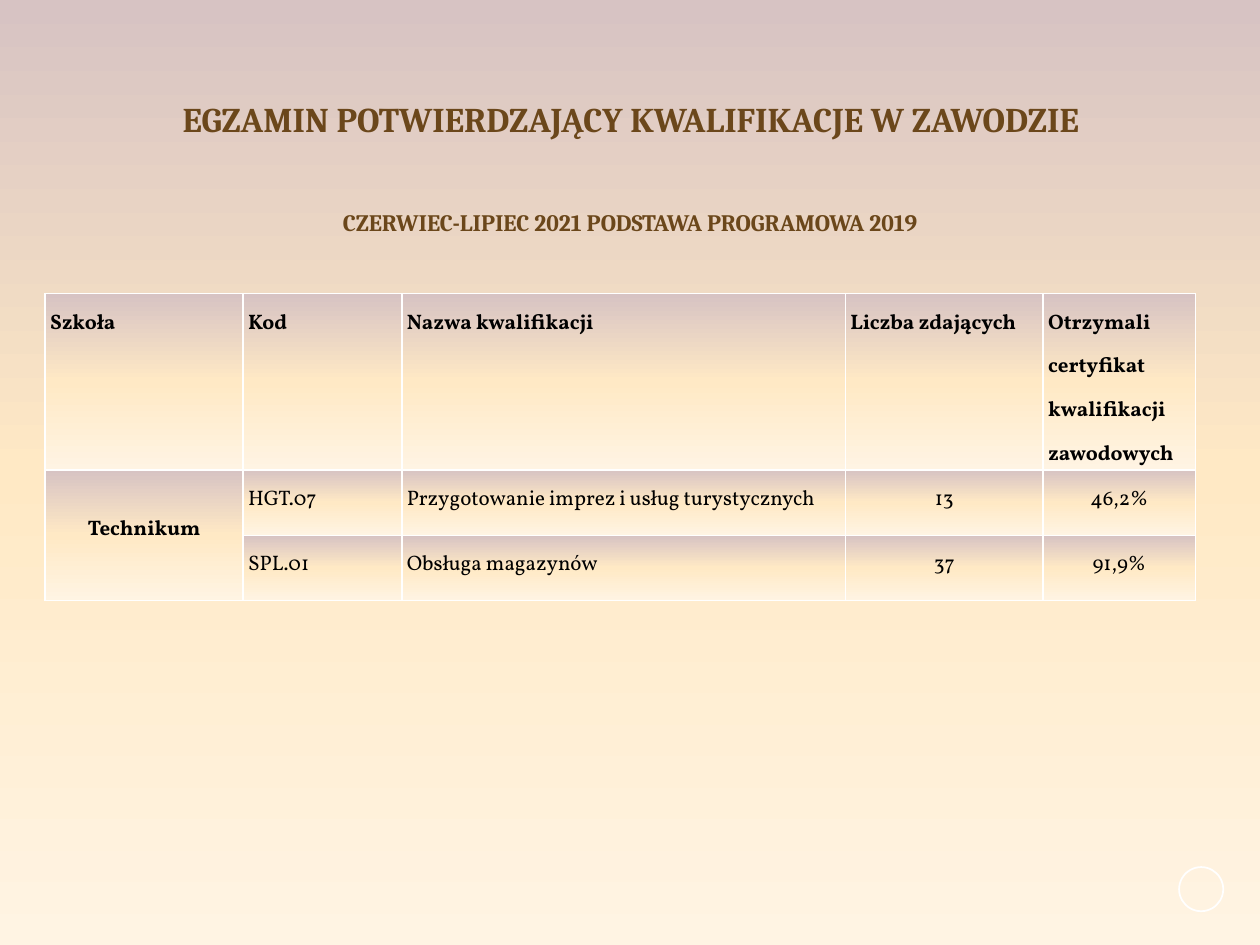
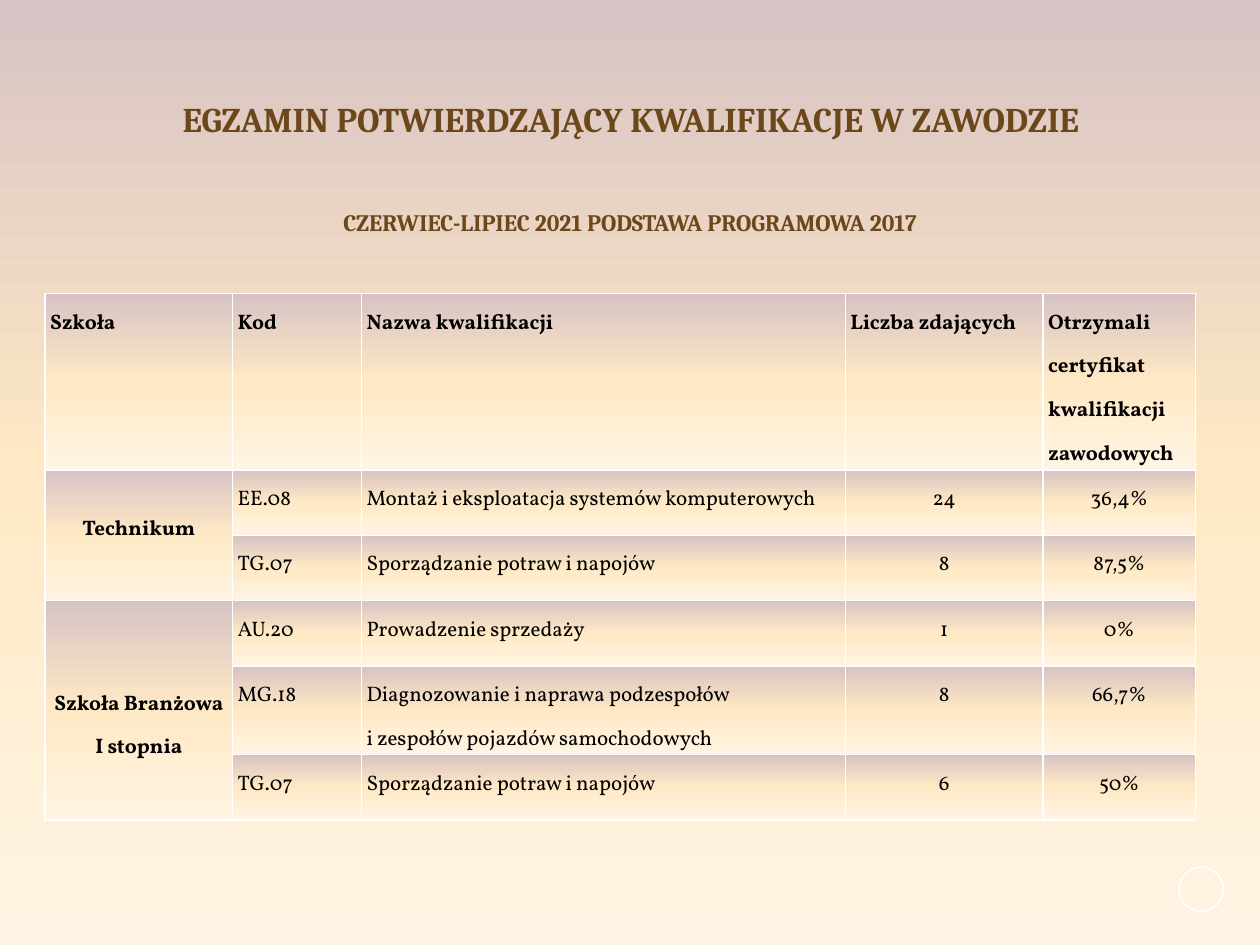
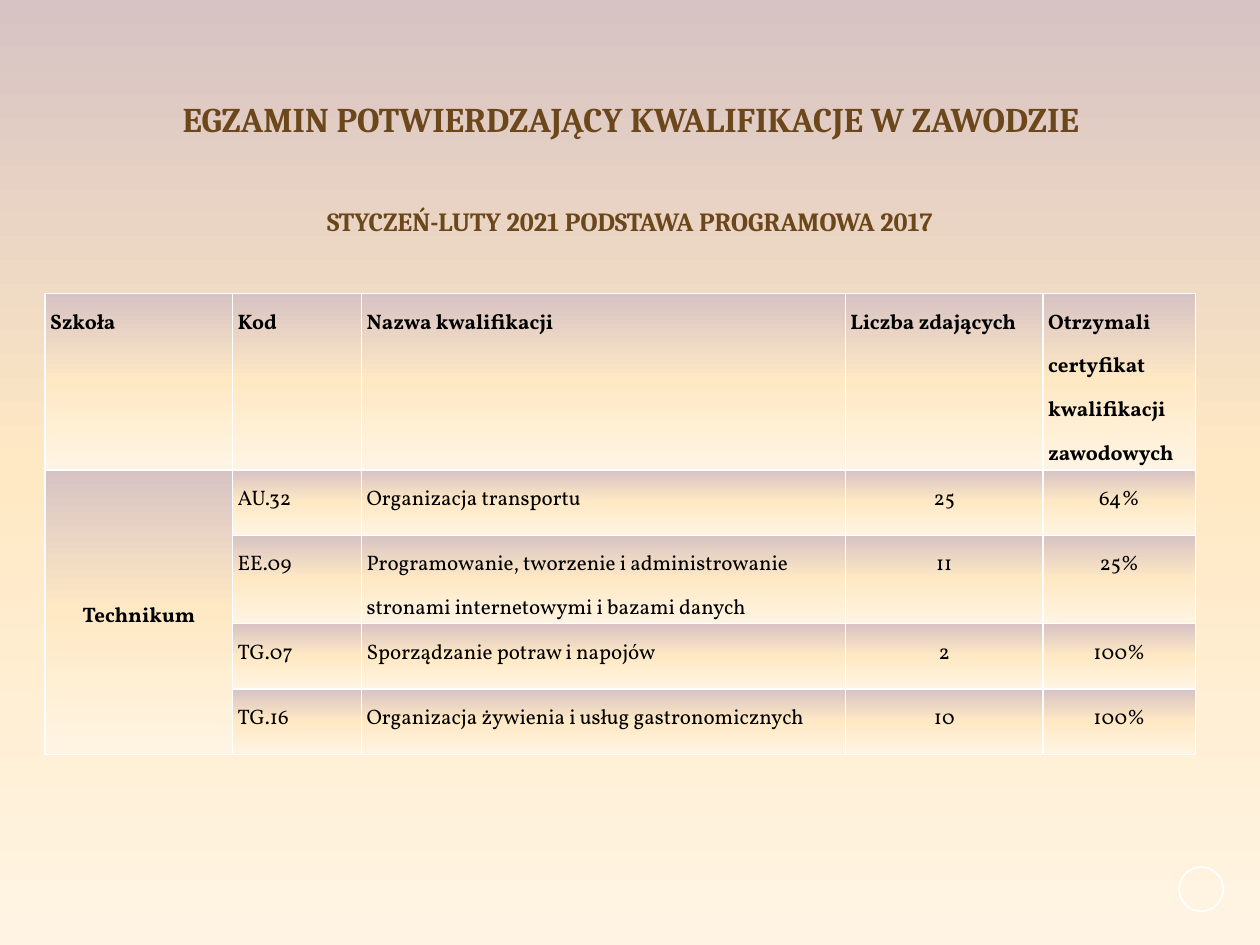
from copy import deepcopy
from dataclasses import dataclass
from typing import Any

from lxml import etree
from pptx import Presentation, util as u
from pptx.dml import color, fill as fills
from pptx.enum import shapes, text
from pptx.oxml import ns


@dataclass(frozen=True)
class Theme:
    brown: str = "6B471B"
    black: str = "000000"
    white: str = "FFFFFF"
    gradient: tuple = ((0, "D7C3C3"), (0.5, "FFE9C5"), (1, "FFF4E3"))
    heading_font: str = "Cambria"
    table_font: str = "Vollkorn"
    title_size: float = 19.8
    subtitle_size: float = 13.5
    large_subtitle_size: float = 15
    table_size: float = 12
    rule_width: float = 1


@dataclass(frozen=True)
class Heading:
    left: float
    top: float
    width: float
    height: float
    line_spacing: float
    bottom_inset: float


# Shared layout, in centimetres
TITLE = Heading(0.91, 2.13, 23.6, 1.4, 0.9, 0.91)
SUBTITLE = Heading(6.1, 4.11, 13.21, 1.4, 0.7, 0.67)
TABLE_LEFT, TABLE_TOP = 0.91, 5.92
HEADER_HEIGHT, ROW_HEIGHT, TALL_ROW_HEIGHT = 3.55, 1.32, 1.78
CELL_SIDE, CELL_TOP = 0.1, 0.02
FIRST_LINE, NEXT_LINE = 0.61, 0.88
CELL_LINE_SPACING = 1.5
WIDE_CODES = (3.99, 3.2, 8.94, 3.99, 3.07)
WIDE_NAMES = (3.78, 2.6, 9.75, 3.99, 3.07)


@dataclass(frozen=True)
class Qualification:
    code: str
    name: str
    candidates: str
    certified: str
    height: float = ROW_HEIGHT


@dataclass(frozen=True)
class School:
    name: str
    lines_above: int
    qualifications: tuple[Qualification, ...]


@dataclass(frozen=True)
class ExamSession:
    subtitle: str
    subtitle_size: float
    columns: tuple[float, ...]
    schools: tuple[School, ...]


THEME = Theme()
CENTER, LEFT = text.PP_ALIGN.CENTER, text.PP_ALIGN.LEFT

# Content
TITLE_TEXT = "EGZAMIN POTWIERDZAJĄCY KWALIFIKACJE W ZAWODZIE"
HEADERS = ("Szkoła", "Kod", "Nazwa kwalifikacji", "Liczba zdających",
           "Otrzymali certyfikat kwalifikacji zawodowych")
COOKING = "Sporządzanie potraw i napojów"
SESSIONS = (
    ExamSession("CZERWIEC-LIPIEC 2021 PODSTAWA PROGRAMOWA 2019",
                THEME.subtitle_size, WIDE_CODES, (
        School("Technikum", 1, (
            Qualification("HGT.07", "Przygotowanie imprez i usług turystycznych",
                          "13", "46,2%"),
            Qualification("SPL.01", "Obsługa magazynów", "37", "91,9%"),
        )),
    )),
    ExamSession("CZERWIEC-LIPIEC 2021 PODSTAWA PROGRAMOWA 2017",
                THEME.subtitle_size, WIDE_NAMES, (
        School("Technikum", 1, (
            Qualification("EE.08", "Montaż i eksploatacja systemów komputerowych",
                          "24", "36,4%"),
            Qualification("TG.07", COOKING, "8", "87,5%"),
        )),
        School("Szkoła Branżowa\nI stopnia", 2, (
            Qualification("AU.20", "Prowadzenie sprzedaży", "1", "0%"),
            Qualification("MG.18", "Diagnozowanie i naprawa podzespołów\n"
                          "i zespołów pojazdów samochodowych", "8", "66,7%",
                          TALL_ROW_HEIGHT),
            Qualification("TG.07", COOKING, "6", "50%"),
        )),
    )),
    ExamSession("STYCZEŃ-LUTY 2021 PODSTAWA PROGRAMOWA 2017",
                THEME.large_subtitle_size, WIDE_NAMES, (
        School("Technikum", 3, (
            Qualification("AU.32", "Organizacja transportu", "25", "64%"),
            Qualification("EE.09", "Programowanie, tworzenie i administrowanie "
                          "stronami internetowymi i bazami danych", "11", "25%",
                          TALL_ROW_HEIGHT),
            Qualification("TG.07", COOKING, "2", "100%"),
            Qualification("TG.16", "Organizacja żywienia i usług gastronomicznych",
                          "10", "100%"),
        )),
    )),
)


# Formatting helpers
def apply(target: Any, values: dict[str, Any]) -> None:
    for name, value in values.items():
        setattr(target, name, value)


def rgb(value: str) -> color.RGBColor:
    return color.RGBColor.from_string(value)


def paint_gradient(fill: fills.FillFormat, element: Any) -> None:
    """Give a fill the three theme stops, running from top to bottom."""
    fill.gradient()
    fill.gradient_angle = 270
    stop_list = element.find(".//" + ns.qn("a:gsLst"))
    stop_list.insert(1, deepcopy(stop_list[0]))
    for stop, (position, shade) in zip(fill.gradient_stops, THEME.gradient):
        stop.position = position
        stop.color.rgb = rgb(shade)


def write(frame: Any, content: str, font: dict[str, Any], shade: str,
          layout: dict[str, Any]) -> None:
    for index, line in enumerate(content.split("\n")):
        para = frame.add_paragraph() if index else frame.paragraphs[0]
        apply(para, layout)
        span = para.add_run()
        span.text = line
        apply(span.font, font)
        span.font.color.rgb = rgb(shade)


# Slide parts
def add_heading(page: Any, place: Heading, content: str, size: float) -> None:
    box = page.shapes.add_textbox(u.Cm(place.left), u.Cm(place.top),
                                  u.Cm(place.width), u.Cm(place.height))
    apply(box.text_frame, {"word_wrap": True,
                           "vertical_anchor": text.MSO_ANCHOR.MIDDLE,
                           "margin_bottom": u.Cm(place.bottom_inset)})
    write(box.text_frame, content,
          {"name": THEME.heading_font, "size": u.Pt(size), "bold": True},
          THEME.brown,
          {"alignment": CENTER, "line_spacing": place.line_spacing})


def add_ring(page: Any) -> None:
    ring = page.shapes.add_shape(shapes.MSO_SHAPE.OVAL, u.Cm(23.77), u.Cm(17.48),
                                 u.Cm(0.89), u.Cm(0.89))
    ring.shadow.inherit = False
    ring.fill.background()
    ring.line.color.rgb = rgb(THEME.white)
    ring.line.width = u.Pt(THEME.rule_width)


def style_cell(cell: Any) -> None:
    apply(cell, {"margin_left": u.Cm(CELL_SIDE), "margin_right": u.Cm(CELL_SIDE),
                 "margin_top": u.Cm(CELL_TOP), "margin_bottom": 0})
    properties = cell._tc.get_or_add_tcPr()
    paint_gradient(cell.fill, properties)
    for index, side in enumerate(("lnL", "lnR", "lnT", "lnB")):
        border = etree.Element(ns.qn("a:" + side),
                               w=str(u.Pt(THEME.rule_width)))
        solid = etree.SubElement(border, ns.qn("a:solidFill"))
        etree.SubElement(solid, ns.qn("a:srgbClr"), val=THEME.white)
        properties.insert(index, border)


def write_cell(cell: Any, content: str, bold: bool = False,
               alignment: text.PP_ALIGN = LEFT) -> None:
    write(cell.text_frame, content,
          {"name": THEME.table_font, "size": u.Pt(THEME.table_size), "bold": bold},
          THEME.black,
          {"alignment": alignment, "line_spacing": CELL_LINE_SPACING})


def add_results(page: Any, session: ExamSession) -> None:
    heights = [HEADER_HEIGHT] + [item.height for school in session.schools
                                 for item in school.qualifications]
    table = page.shapes.add_table(
        len(heights), len(HEADERS), u.Cm(TABLE_LEFT), u.Cm(TABLE_TOP),
        u.Cm(sum(session.columns)), u.Cm(sum(heights))).table
    apply(table, {"first_row": False, "horz_banding": False})
    for column, width in zip(table.columns, session.columns):
        column.width = u.Cm(width)
    for row, height in zip(table.rows, heights):
        row.height = u.Cm(height)
    for cell in table.iter_cells():
        style_cell(cell)

    for index, header in enumerate(HEADERS):
        write_cell(table.cell(0, index), header, bold=True)

    first = 1
    for school in session.schools:
        last = first + len(school.qualifications) - 1
        school_cell = table.cell(first, 0)
        school_cell.merge(table.cell(last, 0))
        offset = FIRST_LINE + NEXT_LINE * (school.lines_above - 1)
        school_cell.margin_top = u.Cm(CELL_TOP + offset)
        write_cell(school_cell, school.name, bold=True, alignment=CENTER)
        for row_index, item in enumerate(school.qualifications, first):
            write_cell(table.cell(row_index, 1), item.code)
            write_cell(table.cell(row_index, 2), item.name)
            write_cell(table.cell(row_index, 3), item.candidates, alignment=CENTER)
            write_cell(table.cell(row_index, 4), item.certified, alignment=CENTER)
        first = last + 1


def main() -> None:
    deck = Presentation()
    apply(deck, {"slide_width": u.Cm(25.4), "slide_height": u.Cm(19.05)})
    master = deck.slide_master
    paint_gradient(master.background.fill, master.element)
    for session in SESSIONS:
        page = deck.slides.add_slide(deck.slide_layouts[6])
        add_ring(page)
        add_heading(page, TITLE, TITLE_TEXT, THEME.title_size)
        add_results(page, session)
        add_heading(page, SUBTITLE, session.subtitle, session.subtitle_size)
    deck.save("out.pptx")


if __name__ == "__main__":
    main()
